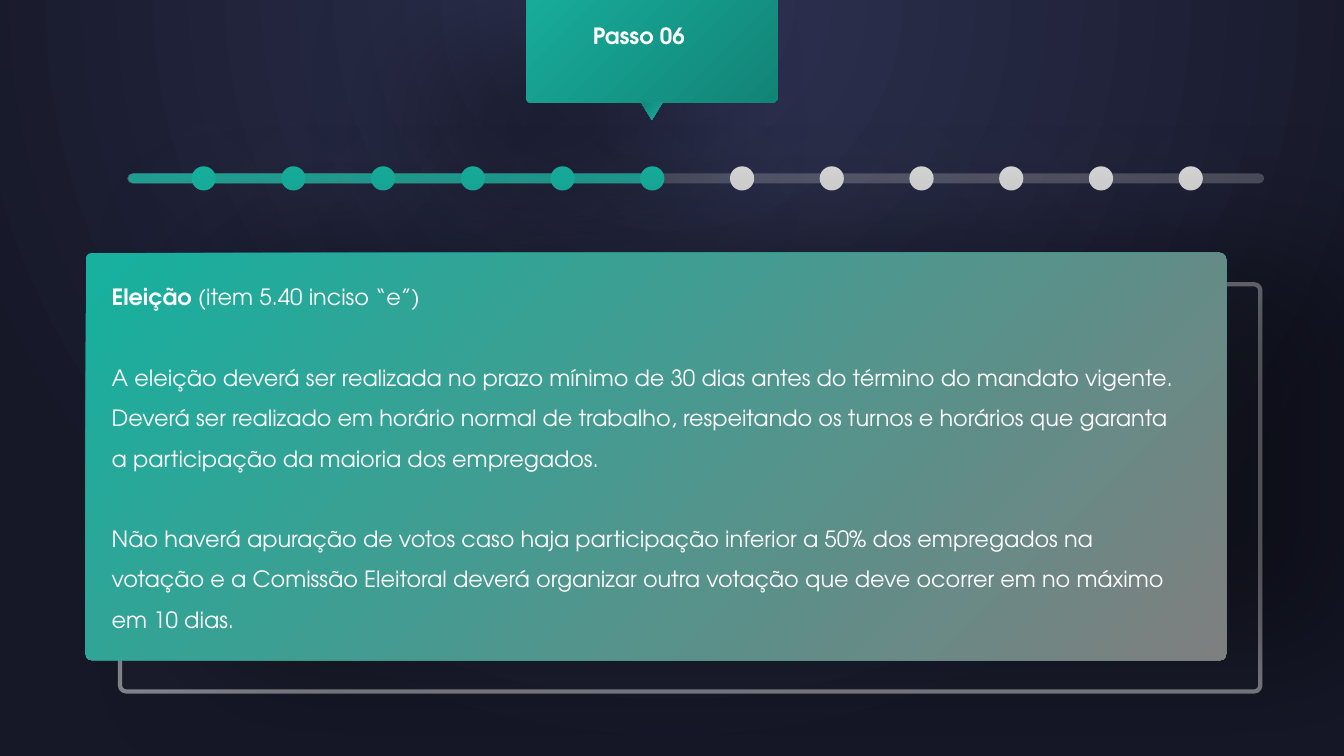
import pptx
import pptx.util
import pptx.dml.color
import pptx.enum.dml
import pptx.enum.shapes
import pptx.enum.text
import pptx.oxml.ns
from lxml import etree

Inches, Pt = pptx.util.Inches, pptx.util.Pt
RGBColor = pptx.dml.color.RGBColor
MSO_SHAPE = pptx.enum.shapes.MSO_SHAPE
qn = pptx.oxml.ns.qn

TEAL = RGBColor(0x18, 0xB0, 0x9E)
DARK_TEAL = RGBColor(0x12, 0x84, 0x77)
LIGHT_GRAY = RGBColor(0xD9, 0xD9, 0xD9)
MID_GRAY = RGBColor(0x7F, 0x7F, 0x7F)
GLOW_GRAY = RGBColor(0xD8, 0xD8, 0xD8)
WHITE = RGBColor(0xFF, 0xFF, 0xFF)
BLACK = RGBColor(0, 0, 0)
INDIGO = RGBColor(0x2E, 0x32, 0x52)
NIGHT = RGBColor(0x16, 0x18, 0x28)
FONT = "TeX Gyre Adventor"

STEPS, CURRENT_STEP = 12, 6
PARAGRAPHS = [
    ([("Eleição ", True), ("(item 5.40 inciso “e”)", False)], 0),
    ([("A eleição deverá ser realizada no prazo mínimo de 30 dias antes do "
       "término do mandato vigente.", False)], 28.8),
    ([("Deverá ser realizado em horário normal de trabalho, respeitando os "
       "turnos e horários que garanta a participação da maioria dos "
       "empregados.", False)], 0),
    ([("Não haverá apuração de votos caso haja participação inferior a 50% "
       "dos empregados na votação e a Comissão Eleitoral deverá organizar "
       "outra votação que deve ocorrer em no máximo em 10 dias.", False)], 28.8),
]


def set_alpha(parent, percent):
    color = parent.find(".//" + qn("a:srgbClr"))
    etree.SubElement(color, qn("a:alpha"), val=str(percent * 1000))


def set_gradient(fill, start, end):
    fill.gradient()
    for stop, color, position in zip(fill.gradient_stops, (start, end), (0.02, 1)):
        stop.color.rgb = color
        stop.position = position


def add_shadow(sp, color, distance=0, direction=0):
    """Give the shape a wide, soft outer shadow; direction is in degrees."""
    effects = sp._element.spPr.find(qn("a:effectLst"))
    shadow = etree.SubElement(
        effects, qn("a:outerShdw"), blurRad=str(Pt(100)), dist=str(Pt(distance)),
        dir=str(direction * 60000), algn="ctr", rotWithShape="0")
    etree.SubElement(shadow, qn("a:srgbClr"), val=str(color))
    set_alpha(shadow, 40)


def add_shape(shapes, kind, left, top, width, height, color, end=None):
    """Add an unlined shape, with a diagonal gradient when end is given."""
    sp = shapes.add_shape(kind, Inches(left), Inches(top), Inches(width), Inches(height))
    sp.shadow.inherit = False
    sp.line.fill.background()
    if end is None:
        sp.fill.solid()
        sp.fill.fore_color.rgb = color
    else:
        set_gradient(sp.fill, color, end)
        sp.fill.gradient_angle = 315
    return sp


def format_paragraph(p):
    p.line_spacing = 1.5
    p.alignment = pptx.enum.text.PP_ALIGN.LEFT
    p.font.name = FONT
    p.font.size = Pt(16)
    p.font.color.rgb = WHITE


def format_frame(tf):
    tf.word_wrap = True
    tf.auto_size = pptx.enum.text.MSO_AUTO_SIZE.SHAPE_TO_FIT_TEXT
    tf.vertical_anchor = pptx.enum.text.MSO_ANCHOR.TOP


def paint_background(slide):
    set_gradient(slide.background.fill, INDIGO, NIGHT)
    grad = slide._element.find(".//" + qn("a:gradFill"))
    lin = grad.find(qn("a:lin"))
    circle = etree.Element(qn("a:path"), {"path": "circle"})
    etree.SubElement(circle, qn("a:fillToRect"), l="50000", t="-80000",
                     r="50000", b="180000")
    grad.replace(lin, circle)


def add_step_flag(slide, left, top, width, height):
    flag = slide.shapes.add_group_shape().shapes
    sp = add_shape(flag, MSO_SHAPE.ROUNDED_RECTANGLE, left, top, width, height,
                   TEAL, DARK_TEAL)
    sp.adjustments[0] = 0.031
    add_shadow(sp, BLACK, 96, 135)
    pointer = add_shape(flag, MSO_SHAPE.ISOSCELES_TRIANGLE, left + width / 2 - 0.105,
                        top + height, 0.21, 0.17, TEAL, DARK_TEAL)
    pointer.rotation = 180

    title = slide.shapes.title
    slide.shapes._spTree.append(title._element)
    title.left, title.top = Inches(left + 0.56), Inches(top + 0.48)
    title.width, title.height = Inches(1.74), Inches(0.45)
    title.text_frame.text = "Passo 06"
    format_frame(title.text_frame)
    p = title.text_frame.paragraphs[0]
    format_paragraph(p)
    p.font.bold = True


def add_track(slide, x1, x2, y, color, alpha):
    line = slide.shapes.add_connector(
        pptx.enum.shapes.MSO_CONNECTOR.STRAIGHT,
        Inches(x1), Inches(y), Inches(x2), Inches(y))
    line.line.color.rgb = color
    line.line.width = Pt(7)
    spPr = line._element.spPr
    ln = spPr.find(qn("a:ln"))
    ln.set("cap", "rnd")
    set_alpha(ln, alpha)
    etree.SubElement(spPr, qn("a:effectLst"))


def add_step_dots(slide, first_x, y, pitch):
    for step in range(STEPS):
        color = TEAL if step < CURRENT_STEP else LIGHT_GRAY
        dot = slide.shapes.add_group_shape().shapes
        x = first_x + step * pitch
        for size, glow in ((0.24, WHITE), (0.13, GLOW_GRAY)):
            sp = add_shape(dot, MSO_SHAPE.OVAL, x - size / 2, y - size / 2,
                           size, size, color)
            add_shadow(sp, glow)


def add_card(slide, left, top, width, height):
    frame = add_shape(slide.shapes, MSO_SHAPE.ROUNDED_RECTANGLE,
                      left + 0.34, top + 0.31, width, height, WHITE)
    set_alpha(frame._element.spPr.find(qn("a:solidFill")), 2)
    frame.line.color.rgb = WHITE
    frame.line.width = Pt(3)
    set_alpha(frame._element.spPr.find(qn("a:ln")), 45)
    panel = add_shape(slide.shapes, MSO_SHAPE.ROUNDED_RECTANGLE,
                      left, top, width, height, TEAL, MID_GRAY)
    add_shadow(panel, BLACK, 95)
    for sp in (frame, panel):
        sp.adjustments[0] = 0.015

    box = slide.shapes.add_textbox(Inches(left + 0.16), Inches(top + 0.12),
                                   Inches(width - 0.45), Inches(height - 0.36))
    tf = box.text_frame
    format_frame(tf)
    for i, (runs, space) in enumerate(PARAGRAPHS):
        p = tf.add_paragraph() if i else tf.paragraphs[0]
        format_paragraph(p)
        if space:
            p.space_before = Pt(space)
        for text, bold in runs:
            r = p.add_run()
            r.text = text
            r.font.bold = bold


def main():
    prs = pptx.Presentation()
    prs.slide_width, prs.slide_height = Inches(13.33), Inches(7.5)
    slide = prs.slides.add_slide(prs.slide_layouts[5])
    paint_background(slide)
    add_track(slide, 1.31, 12.49, 1.77, LIGHT_GRAY, 25)
    add_step_flag(slide, 5.22, -0.44, 2.49, 1.46)
    add_track(slide, 1.32, 6.44, 1.77, TEAL, 82)
    add_step_dots(slide, 2.02, 1.77, 0.89)
    add_card(slide, 0.85, 2.51, 11.31, 4.04)
    prs.save("out.pptx")


if __name__ == "__main__":
    main()
